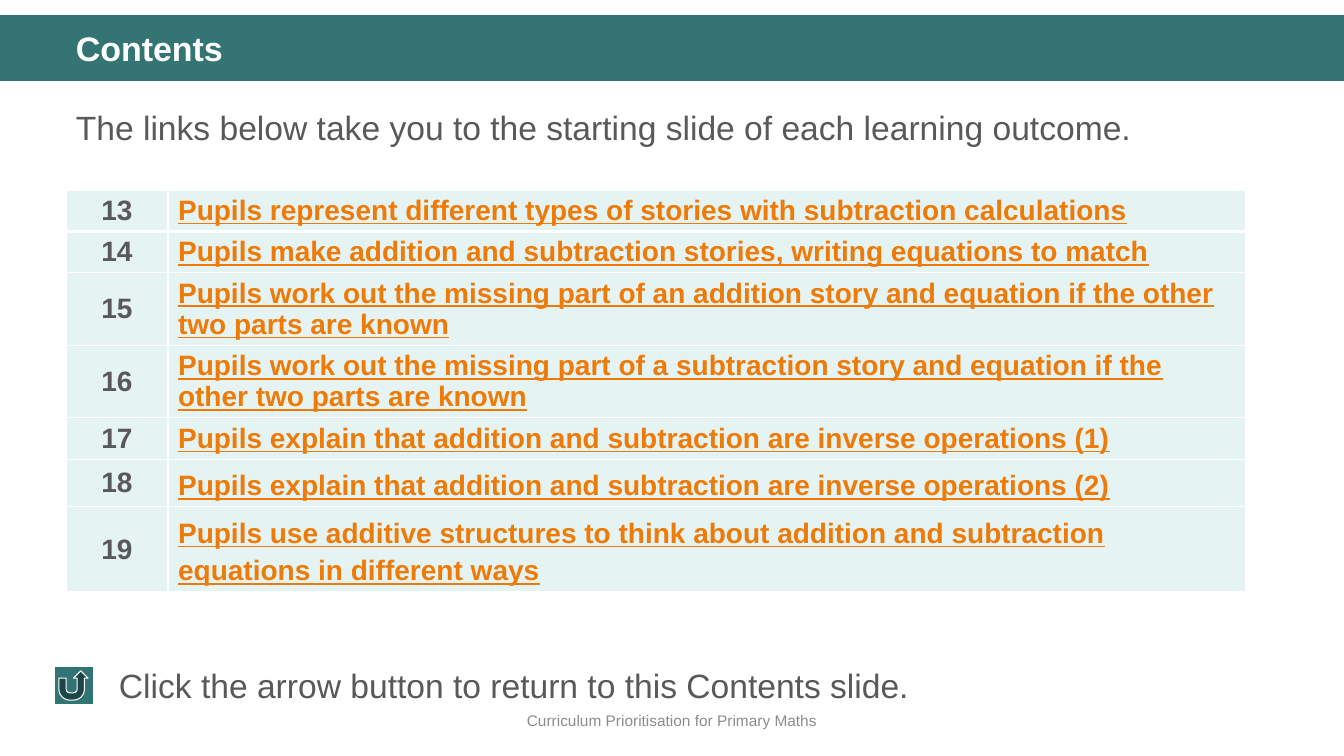
"""Build the contents slide with its table of learning outcomes."""
from lxml import etree
from pptx import Presentation
from pptx.dml.color import RGBColor
from pptx.enum.shapes import MSO_SHAPE
from pptx.enum.text import MSO_ANCHOR, PP_ALIGN
from pptx.oxml.ns import qn
from pptx.util import Emu, Pt

RECT = MSO_SHAPE.RECTANGLE
BACK = MSO_SHAPE.ACTION_BUTTON_RETURN
TOP, MID = MSO_ANCHOR.TOP, MSO_ANCHOR.MIDDLE
LEFT, CENTER = PP_ALIGN.LEFT, PP_ALIGN.CENTER

COLORS = {
    "band": "347574",
    "button": "327473",
    "white": "FFFFFF",
    "grey": "595959",
    "foot": "8C8C8C",
    "cell": "E5F3F2",
    "link": "EE7B08",
}

# text, box in px, size, color, bold, line spacing, align, anchor
TEXTS = [
    ("Curriculum Prioritisation for Primary Maths",
     (0, 700, 1344, 41), 11, "foot", False, 1, CENTER, MID),
    ("The links below take you to the starting slide of each learning outcome.",
     (66, 94, 1228, 354), 24, "grey", False, 1.2, LEFT, TOP),
    ("Click the arrow button to return to this Contents slide.",
     (109, 660, 1141, 50), 24, "grey", False, 1, LEFT, TOP),
    ("Contents",
     (66, 27, 1228, 47), 24.3, "white", True, 0.9, LEFT, MID),
]

# outcome, line spacing
FIRST = 13
ROWS = [
    ("Pupils represent different types of stories with subtraction calculations", 1),
    ("Pupils make addition and subtraction stories, writing equations to match", 1),
    ("Pupils work out the missing part of an addition story and equation if the other two parts are known", 1),
    ("Pupils work out the missing part of a subtraction story and equation if the other two parts are known", 1),
    ("Pupils explain that addition and subtraction are inverse operations (1)", 1),
    ("Pupils explain that addition and subtraction are inverse operations (2)", 1.2),
    ("Pupils use additive structures to think about addition and subtraction equations in different ways", 1.2),
]
COLS = (102, 1078)
ROW_H = 41

SCALE = 914400 / 100.8


def px(num):
    return Emu(round(num * SCALE))


def place(box):
    return [px(num) for num in box]


def rgb(name):
    return RGBColor.from_string(COLORS[name])


def write(frame, text, size, color, bold, gap, align, under=False):
    para = frame.paragraphs[0]
    para.alignment = align
    para.line_spacing = gap
    run = para.add_run()
    run.text = text
    font = run.font
    font.name, font.size = "Arial", Pt(size)
    font.bold, font.underline = bold, under
    font.color.rgb = rgb(color)


def add_text(slide, text, box, size, color, bold, gap, align, anchor):
    frame = slide.shapes.add_textbox(*place(box)).text_frame
    frame.word_wrap = True
    frame.vertical_anchor = anchor
    write(frame, text, size, color, bold, gap, align)


def add_shape(slide, kind, box, color):
    shape = slide.shapes.add_shape(kind, *place(box))
    shape.shadow.inherit = False
    shape.fill.solid()
    shape.fill.fore_color.rgb = rgb(color)
    shape.line.fill.background()
    return shape


def add_edge(cell, side, width):
    line = etree.SubElement(cell._tc.get_or_add_tcPr(), qn("a:ln" + side), w=str(Pt(width)))
    fill = etree.SubElement(line, qn("a:solidFill"))
    etree.SubElement(fill, qn("a:srgbClr"), val=COLORS["white"])


def fill_cell(cell, thick):
    cell.vertical_anchor = MID
    for side in "LRTB":
        add_edge(cell, side, 3 if side == thick else 1)
    cell.fill.solid()
    cell.fill.fore_color.rgb = rgb("cell")


def add_rows(slide):
    box = (66, 190, sum(COLS), ROW_H * len(ROWS))
    table = slide.shapes.add_table(len(ROWS), len(COLS), *place(box)).table
    for col, width in zip(table.columns, COLS):
        col.width = px(width)
    for idx, (text, gap) in enumerate(ROWS):
        table.rows[idx].height = px(ROW_H)
        num, goal = table.cell(idx, 0), table.cell(idx, 1)
        thick = {0: "B", 1: "T"}.get(idx)
        fill_cell(num, thick)
        fill_cell(goal, thick)
        write(num.text_frame, str(FIRST + idx), 20, "grey", True, 1, CENTER)
        write(goal.text_frame, text, 20, "link", True, gap, LEFT, True)


def main():
    deck = Presentation()
    deck.slide_width, deck.slide_height = px(1344), px(756)
    slide = deck.slides.add_slide(deck.slide_layouts[6])
    add_shape(slide, RECT, (0, 15, 1344, 66), "band")
    add_rows(slide)
    button = add_shape(slide, BACK, (54, 666, 39, 39), "button")
    button.line.color.rgb = rgb("white")
    button.line.width = Pt(0.75)
    for item in TEXTS:
        add_text(slide, *item)
    deck.save("out.pptx")


if __name__ == "__main__":
    main()
